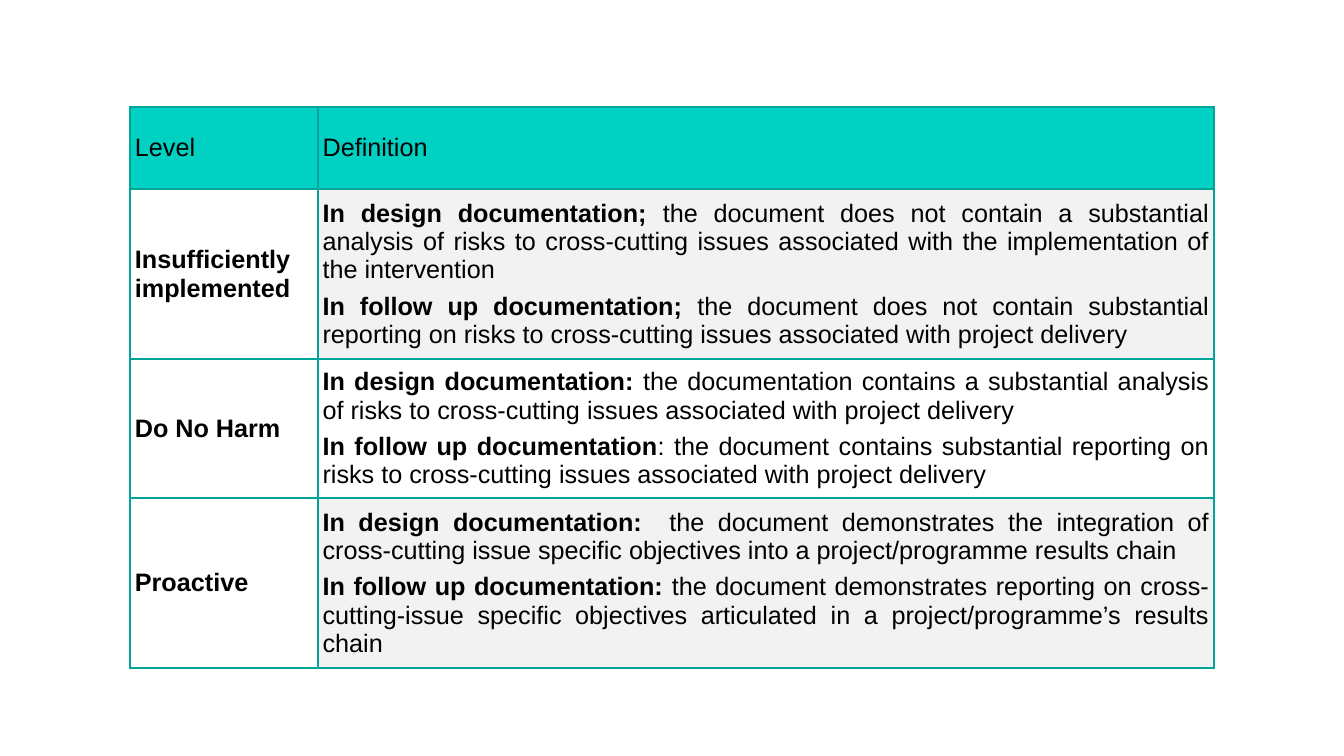
import pptx
import pptx.dml.color
import pptx.enum.text
import pptx.oxml
import pptx.oxml.ns
import pptx.util

Cm = pptx.util.Cm
Pt = pptx.util.Pt
RGBColor = pptx.dml.color.RGBColor

BLACK = RGBColor(0x00, 0x00, 0x00)
WHITE = RGBColor(0xFF, 0xFF, 0xFF)
TURQUOISE = RGBColor(0x00, 0xD1, 0xC3)
TEAL = RGBColor(0x00, 0xA4, 0x99)
PALE_GREY = RGBColor(0xF2, 0xF2, 0xF2)

COLUMN_WIDTHS = (Cm(4.73), Cm(22.58))
ROW_HEIGHTS = (Cm(2.08), Cm(4.28), Cm(3.5), Cm(4.28))

CELL_FORMAT = {
    "vertical_anchor": pptx.enum.text.MSO_ANCHOR.MIDDLE,
    "margin_left": Cm(0.12),
    "margin_right": Cm(0.12),
    "margin_top": Cm(0.12),
    "margin_bottom": Cm(0.12),
}
PARAGRAPH_FORMAT = {
    "alignment": pptx.enum.text.PP_ALIGN.JUSTIFY,
    "space_after": Pt(6),
}
FONT_FORMAT = {"name": "Arial", "size": Pt(18)}

HEADINGS = ("Level", "Definition")
LEVELS = (
    ("Insufficiently implemented", PALE_GREY, (
        ("In design documentation; ",
         "the document does not contain a substantial analysis of risks to "
         "cross-cutting issues associated with the implementation of the intervention"),
        ("In follow up documentation; ",
         "the document does not contain substantial reporting on risks to "
         "cross-cutting issues associated with project delivery"),
    )),
    ("Do No Harm", None, (
        ("In design documentation: ",
         "the documentation contains a substantial analysis of risks to "
         "cross-cutting issues associated with project delivery"),
        ("In follow up documentation",
         ": the document contains substantial reporting on risks to "
         "cross-cutting issues associated with project delivery"),
    )),
    ("Proactive", PALE_GREY, (
        ("In design documentation: ",
         " the document demonstrates the integration of cross-cutting issue "
         "specific objectives into a project/programme results chain"),
        ("In follow up documentation: ",
         "the document demonstrates reporting on cross-cutting-issue specific "
         "objectives articulated in a project/programme’s results chain"),
    )),
)


def apply_format(target, values):
    for name, value in values.items():
        setattr(target, name, value)


def add_borders(cell):
    properties = cell._tc.get_or_add_tcPr()
    for position, side in enumerate(("lnL", "lnR", "lnT", "lnB")):
        border = pptx.oxml.parse_xml(
            f'<a:{side} {pptx.oxml.ns.nsdecls("a")} w="{Pt(1.5)}">'
            f'<a:solidFill><a:srgbClr val="{TEAL}"/></a:solidFill></a:{side}>'
        )
        properties.insert(position, border)


def write_cell(cell, paragraphs, fill):
    apply_format(cell, CELL_FORMAT)
    if fill is None:
        cell.fill.background()
    else:
        cell.fill.solid()
        cell.fill.fore_color.rgb = fill
    add_borders(cell)
    frame = cell.text_frame
    for index, runs in enumerate(paragraphs):
        paragraph = frame.add_paragraph() if index else frame.paragraphs[0]
        apply_format(paragraph, PARAGRAPH_FORMAT)
        for text, bold in runs:
            run = paragraph.add_run()
            run.text = text
            apply_format(run.font, FONT_FORMAT)
            run.font.bold = bold
            run.font.color.rgb = BLACK


def add_level_table(slide):
    levels = slide.shapes.add_table(
        len(ROW_HEIGHTS), len(COLUMN_WIDTHS), Cm(3.28), Cm(2.69),
        sum(COLUMN_WIDTHS), sum(ROW_HEIGHTS),
    ).table
    levels.horz_banding = False
    for column, width in zip(levels.columns, COLUMN_WIDTHS):
        column.width = width
    for row, height in zip(levels.rows, ROW_HEIGHTS):
        row.height = height
    for index, heading in enumerate(HEADINGS):
        write_cell(levels.cell(0, index), [[(heading, False)]], TURQUOISE)
    for index, (level, fill, definitions) in enumerate(LEVELS, start=1):
        write_cell(levels.cell(index, 0), [[(level, True)]], WHITE)
        paragraphs = [[(stage, True), (meaning, False)] for stage, meaning in definitions]
        write_cell(levels.cell(index, 1), paragraphs, fill)


def main():
    presentation = pptx.Presentation()
    presentation.slide_width = Cm(33.87)
    presentation.slide_height = Cm(19.05)
    slide = presentation.slides.add_slide(presentation.slide_layouts[6])
    add_level_table(slide)
    presentation.save("out.pptx")


if __name__ == "__main__":
    main()
